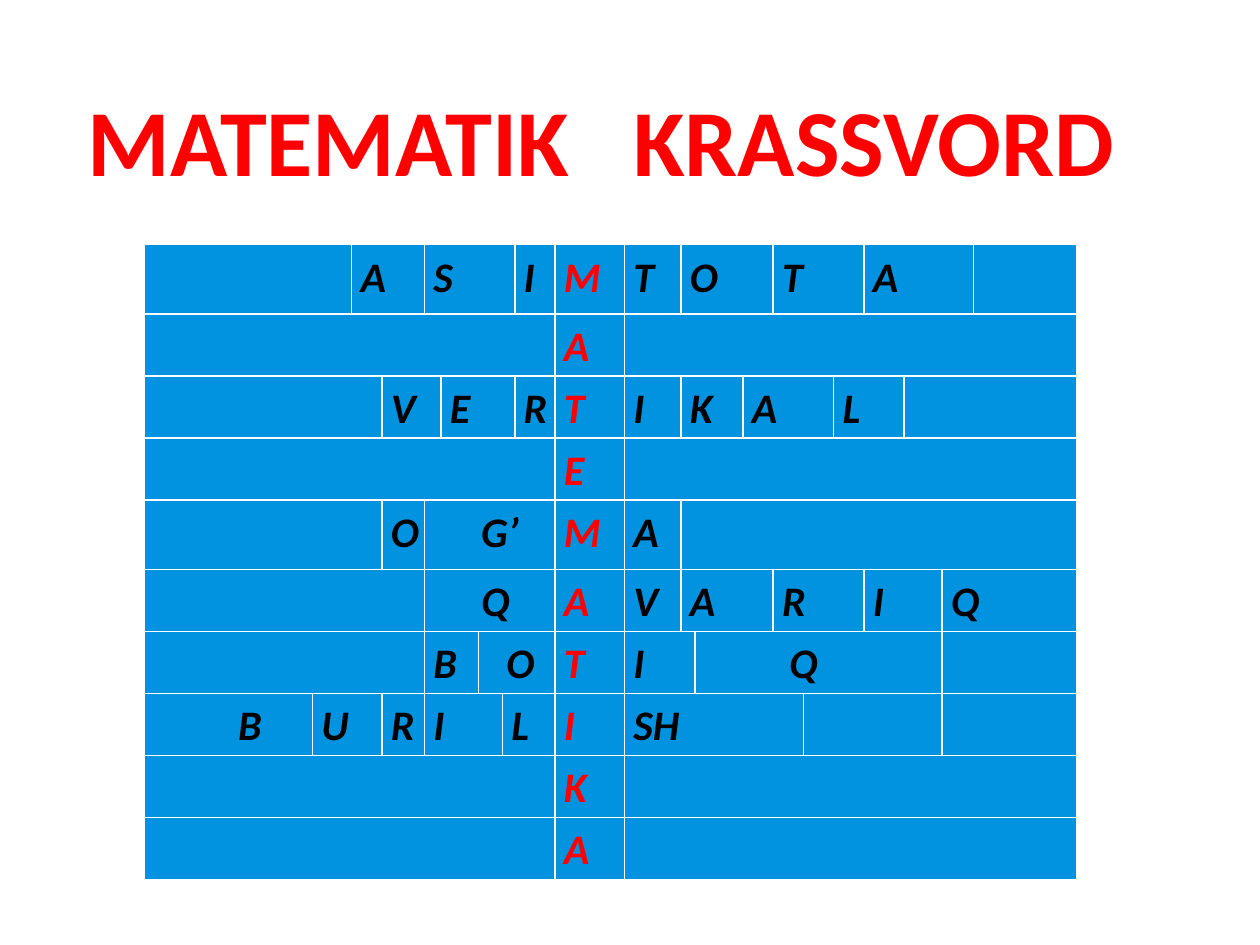
from dataclasses import dataclass

from lxml.etree import SubElement
from pptx import Presentation
from pptx.dml.color import RGBColor as RGB
from pptx.enum.text import MSO_ANCHOR as Anchor, PP_ALIGN as Align
from pptx.oxml.ns import qn
from pptx.util import Cm, Pt


@dataclass(frozen=True)
class Theme:
    font: str = "Calibri"
    title_size: int = 54
    cell_size: int = 24
    red: str = "FF0000"
    black: str = "000000"
    blue: str = "0293E0"
    white: str = "FFFFFF"


theme = Theme()


def add_text(p, text, size, color, italic=False, tracking=None):
    r = p.add_run()
    r.text = text
    r.font.name = theme.font
    r.font.size = Pt(size)
    r.font.bold = True
    r.font.italic = italic
    r.font.color.rgb = RGB.from_string(color)
    if tracking is not None:
        r._r.get_or_add_rPr().set("spc", str(tracking))


def add_borders(cell, color, width):
    tc_pr = cell._tc.get_or_add_tcPr()
    for side in ("lnL", "lnR", "lnT", "lnB"):
        ln = SubElement(tc_pr, qn(f"a:{side}"), w=str(Pt(width)))
        fill = SubElement(ln, qn("a:solidFill"))
        SubElement(fill, qn("a:srgbClr"), val=color)


prs = Presentation()
prs.slide_width, prs.slide_height = Cm(25.4), Cm(19.05)
s = prs.slides.add_slide(prs.slide_layouts[5])

title = s.shapes.title
title.left, title.top, title.width, title.height = Cm(0.89), Cm(1.52), Cm(22.45), Cm(2.57)
tf = title.text_frame
tf.word_wrap = False
tf.vertical_anchor = Anchor.TOP
p = tf.paragraphs[0]
p.alignment = Align.CENTER
for text, tracking in (("MATEMATIK", 0), (" ", 2440), ("KRASSVORD", 0)):
    add_text(p, text, theme.title_size, theme.red, tracking=tracking)

col_widths = [3.4, 0.79, 0.46, 0.86, 0.33, 0.76, 0.48, 0.25, 0.81, 1.4, 1.14,
              0.28, 0.97, 0.61, 0.61, 0.61, 0.61, 0.81, 0.76, 0.64, 2.08]
row_heights = [1.4, 1.25, 1.25, 1.25, 1.4] + [1.25] * 5
key_col = 9
inset = 0.18
indents = {(4, 4): 0.96, (5, 4): 0.96, (6, 6): 0.38, (6, 12): 1.72, (7, 0): 1.72}


crossword = [
    [("", 2), ("A", 2), ("S", 4), ("I", 1), ("M", 1), ("T", 1), ("O", 3), ("T", 3), ("A", 3), ("", 1)],
    [("", 9), ("A", 1), ("", 11)],
    [("", 3), ("V", 2), ("E", 3), ("R", 1), ("T", 1), ("I", 1), ("K", 2), ("A", 3), ("L", 2), ("", 3)],
    [("", 9), ("E", 1), ("", 11)],
    [("", 3), ("O", 1), ("G’", 5), ("M", 1), ("A", 1), ("", 10)],
    [("", 4), ("Q", 5), ("A", 1), ("V", 1), ("A", 3), ("R", 3), ("I", 2), ("Q", 2)],
    [("", 4), ("B", 2), ("O", 3), ("T", 1), ("I", 2), ("Q", 7), ("", 2)],
    [("B", 1), ("U", 2), ("R", 1), ("I", 3), ("L", 2), ("I", 1), ("SH", 5), ("", 4), ("", 2)],
    [("", 9), ("K", 1), ("", 11)],
    [("", 9), ("A", 1), ("", 11)],
]

table = s.shapes.add_table(len(row_heights), len(col_widths), Cm(2.9), Cm(4.93),
                           Cm(sum(col_widths)), Cm(sum(row_heights))).table
table.first_row = table.horz_banding = False
for column, width in zip(table.columns, col_widths):
    column.width = Cm(width)
for row, height in zip(table.rows, row_heights):
    row.height = Cm(height)
for cell in table.iter_cells():
    add_borders(cell, theme.white, 1)
    cell.fill.solid()
    cell.fill.fore_color.rgb = RGB.from_string(theme.blue)

for row, entries in enumerate(crossword):
    col = 0
    for text, span in entries:
        cell = table.cell(row, col)
        if span > 1:
            cell.merge(table.cell(row, col + span - 1))
        if text:
            cell.margin_left = Cm(inset + indents.get((row, col), 0))
            cell.margin_right = Cm(inset)
            cell.margin_top = cell.margin_bottom = 0
            p = cell.text_frame.paragraphs[0]
            p.line_spacing = 1.15
            p.space_after = Pt(10)
            color = theme.red if col == key_col else theme.black
            add_text(p, text, theme.cell_size, color, italic=True)
        col += span

prs.save("out.pptx")
